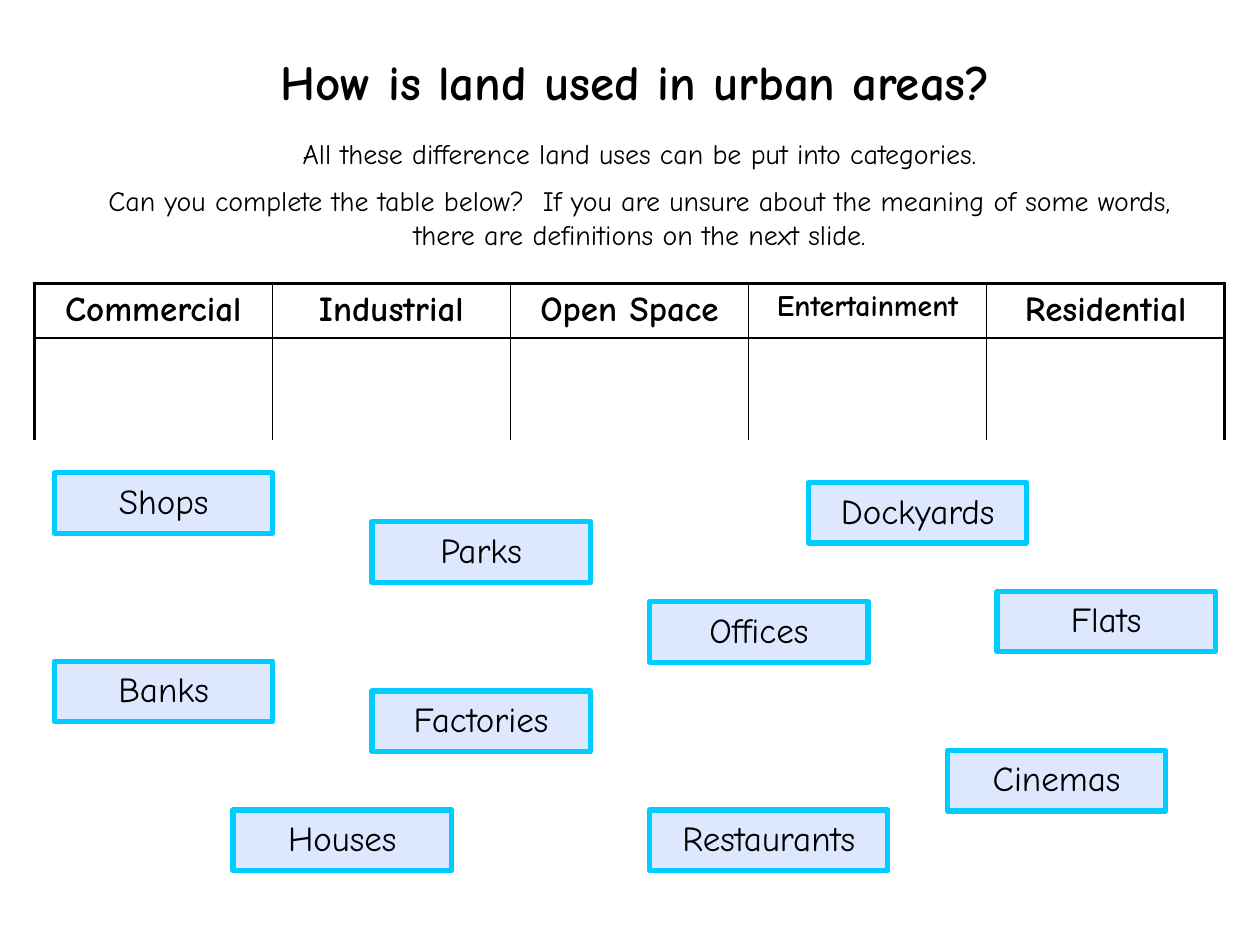
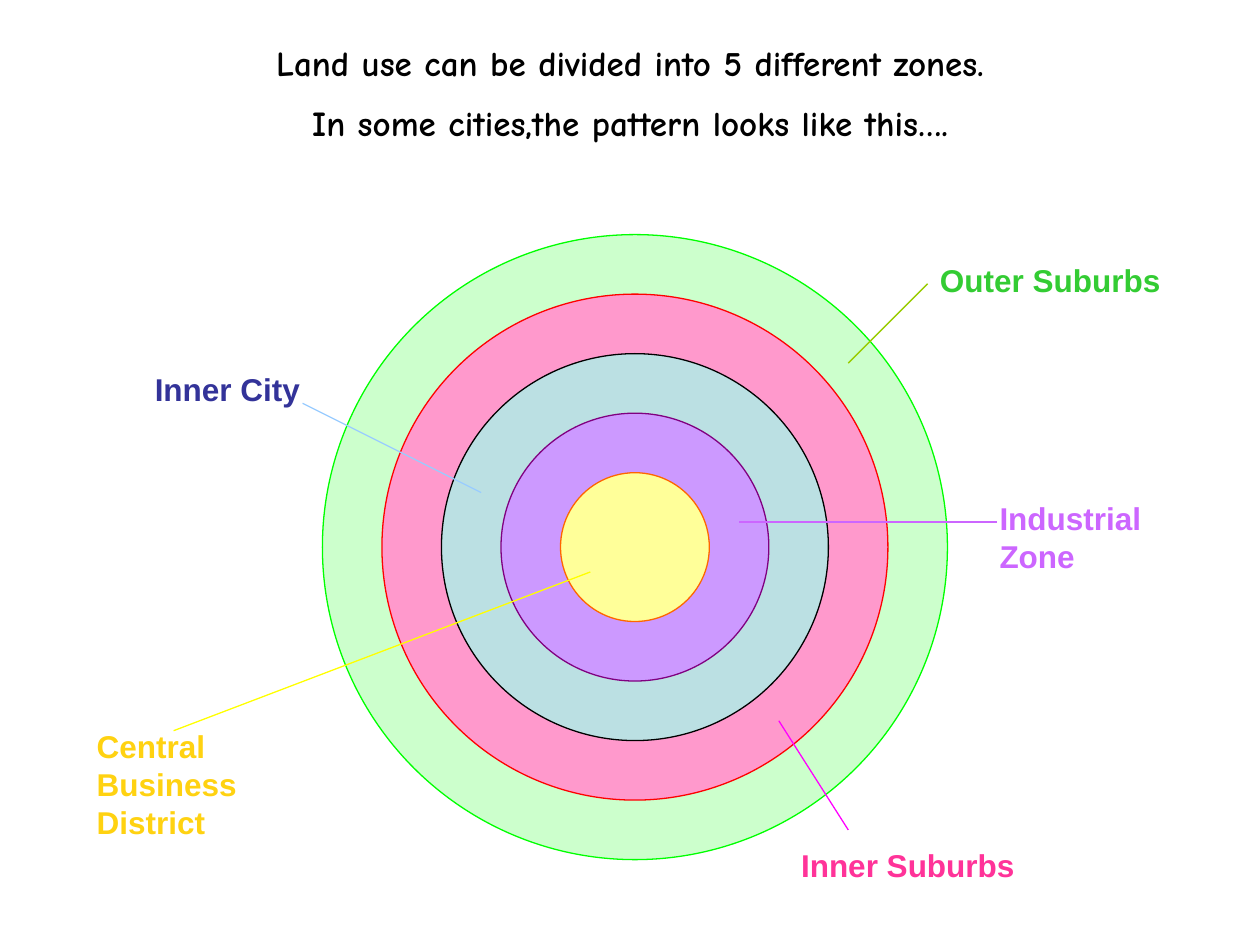
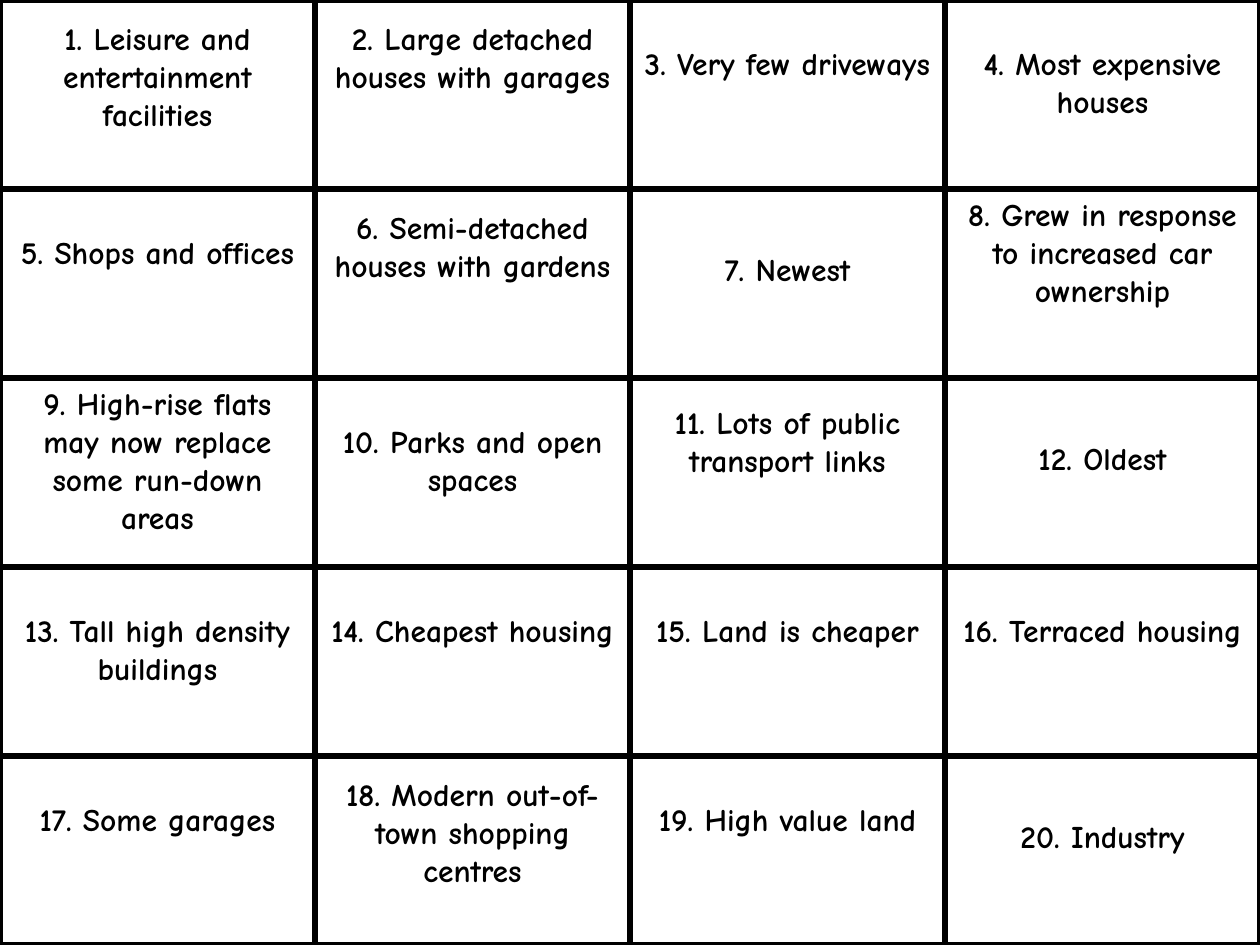
from lxml import etree
from pptx import Presentation
from pptx.dml.color import RGBColor
from pptx.enum.shapes import MSO_CONNECTOR, MSO_SHAPE
from pptx.enum.text import MSO_ANCHOR, MSO_AUTO_SIZE, PP_ALIGN
from pptx.oxml.ns import qn
from pptx.util import Cm, Pt

RECT, OVAL = MSO_SHAPE.RECTANGLE, MSO_SHAPE.OVAL
STRAIGHT = MSO_CONNECTOR.STRAIGHT
TOP, FIXED = MSO_ANCHOR.TOP, MSO_AUTO_SIZE.NONE
LEFT, MID, RIGHT = PP_ALIGN.LEFT, PP_ALIGN.CENTER, PP_ALIGN.RIGHT
TITLE_ONLY, BLANK = 5, 6
HAND, SANS = "Comic Neue", "Arial"

HUES = {
    "ink": "000000", "paper": "FFFFFF", "card": "DDE8FF", "edge": "00CCFF",
    "mint": "CCFFCC", "lime": "00FF00", "pink": "FF99CC", "red": "FF0000",
    "teal": "BBE0E3", "lilac": "CC99FF", "plum": "800080",
    "cream": "FFFF99", "orange": "FF6600", "green": "33CC33",
    "rose": "FF3399", "navy": "333399", "violet": "CC66FF",
    "gold": "FFD211", "sky": "99CCFF", "yellow": "FFFF00",
    "magenta": "FF00FF", "olive": "99CC00",
}

# All places and sizes below are in centimetres.
ASK = ["How is land used in urban areas?"]
TASK = [
    "All these difference land uses can be put into categories.",
    "Can you complete the table below?  If you are unsure about the meaning "
    "of some words, there are definitions on the next slide.",
]
HEADS = [("Commercial", 20), ("Industrial", 20), ("Open Space", 20),
         ("Entertainment", 17), ("Residential", 20)]
COL_W, ROW_H = 4.8, (1.09, 2.06)

CARD_W, CARD_H = 4.4, 1.22
CARDS = [  # word, left, top, extra width
    ("Shops", 1.1, 9.53, 0), ("Dockyards", 16.3, 9.73, 0),
    ("Banks", 1.1, 13.33, 0), ("Factories", 7.5, 13.93, 0),
    ("Houses", 4.7, 16.33, 0), ("Flats", 20.1, 11.92, 0),
    ("Parks", 7.5, 10.52, 0), ("Restaurants", 13.1, 16.33, 0.4),
    ("Cinemas", 19.1, 15.13, 0), ("Offices", 13.1, 12.13, 0),
]

ZONES = ["Land use can be divided into 5 different zones.",
         "In some cities,the pattern looks like this…."]
HUB, CORE, STEP = (12.8, 11.03), 3, 2.4
RINGS = [("mint", "lime"), ("pink", "red"), ("teal", "ink"),
         ("lilac", "plum"), ("cream", "orange")]
LABELS = [  # words, box, hue, alignment, line hue, line start, line end
    ("Outer Suburbs", (18.7, 5.13, 5.38, 1.02), "green", LEFT,
     "olive", (18.7, 5.72), (17.1, 7.32)),
    ("Inner Suburbs", (15.9, 16.92, 5.38, 1.02), "rose", LEFT,
     "magenta", (17.1, 16.73), (15.7, 14.53)),
    ("Inner City", (1.9, 7.32, 4.4, 1.02), "navy", RIGHT,
     "sky", (6.1, 8.13), (9.7, 9.93)),
    ("Industrial Zone", (19.9, 9.93, 3.81, 1.78), "violet", LEFT,
     "violet", (20.1, 10.52), (14.9, 10.52)),
    ("Central Business District", (1.7, 14.53, 5.38, 2.57), "gold", LEFT,
     "yellow", (3.5, 14.73), (11.9, 11.53)),
]

FACTS = [  # words, drop of the first line
    ("Leisure and entertainment facilities", 0.26),
    ("Large detached houses with garages", 0.26),
    ("Very few driveways", 0.76),
    ("Most expensive houses", 0.76),
    ("Shops and offices", 0.76),
    ("Semi-detached houses with gardens", 0.26),
    ("Newest", 1.11),
    ("Grew in response to increased car ownership", 0),
    ("High-rise flats may now replace some run-down areas", 0),
    ("Parks and open spaces", 0.76),
    ("Lots of public transport links", 0.38),
    ("Oldest", 1.11),
    ("Tall high density buildings", 0.76),
    ("Cheapest housing", 0.76),
    ("Land is cheaper", 0.76),
    ("Terraced housing", 0.76),
    ("Some garages", 0.76),
    ("Modern out-of-town shopping centres", 0.26),
    ("High value land", 0.76),
    ("Industry", 1.11),
]
FACT_COLS, FACT_W, FACT_H = 4, 6.35, 3.81


def rgb(hue):
    return RGBColor.from_string(HUES[hue])


def write(frame, lines, size=18, font=HAND, hue="ink", bold=False,
          align=MID, drop=0):
    """Fill a text frame; drop lowers the first line."""
    frame.word_wrap = True
    frame.auto_size = FIXED
    frame.vertical_anchor = TOP
    frame.margin_left = frame.margin_right = Cm(0.25)
    frame.margin_top, frame.margin_bottom = Cm(0.13 + drop), Cm(0.13)
    for i, line in enumerate(lines):
        para = frame.add_paragraph() if i else frame.paragraphs[0]
        para.alignment = align
        para.space_before = Pt(size / 2 if i else 0)
        run = para.add_run()
        run.text = line
        run.font.name, run.font.size, run.font.bold = font, Pt(size), bold
        run.font.color.rgb = rgb(hue)


def add_title(slide, lines, box, size):
    title = slide.shapes.title
    title.left, title.top, title.width, title.height = map(Cm, box)
    write(title.text_frame, lines, size=size, bold=True)


def add_text(slide, lines, box, **style):
    text = slide.shapes.add_textbox(*map(Cm, box))
    write(text.text_frame, lines, **style)


def add_form(slide, kind, box, fill, edge, width):
    form = slide.shapes.add_shape(kind, *map(Cm, box))
    form.shadow.inherit = False
    form.fill.solid()
    form.fill.fore_color.rgb = rgb(fill)
    form.line.color.rgb = rgb(edge)
    form.line.width = Pt(width)
    return form


def add_line(slide, start, end, hue):
    line = slide.shapes.add_connector(STRAIGHT, *map(Cm, start + end))
    line.line.color.rgb = rgb(hue)
    line.line.width = Pt(0.75)
    etree.SubElement(line._element.spPr, qn("a:effectLst"))


def set_edges(cell, widths):
    """Draw left, right, top and bottom borders; zero means none."""
    props = cell._tc.get_or_add_tcPr()
    for side, width in zip("LRTB", widths):
        edge = etree.SubElement(props, qn("a:ln" + side), w=str(Pt(width)))
        if width:
            fill = etree.SubElement(edge, qn("a:solidFill"))
            etree.SubElement(fill, qn("a:srgbClr"), val=HUES["ink"])
        else:
            etree.SubElement(edge, qn("a:noFill"))


def add_grid(slide):
    count = len(HEADS)
    box = (0.69, 5.72, COL_W * count, sum(ROW_H))
    table = slide.shapes.add_table(2, count, *map(Cm, box)).table
    table.first_row = table.horz_banding = False
    for row, high in zip(table.rows, ROW_H):
        row.height = Cm(high)
    thin, thick = 1, 2.25
    for c, (head, size) in enumerate(HEADS):
        table.columns[c].width = Cm(COL_W)
        sides = (thick if c == 0 else thin,
                 thick if c == count - 1 else thin)
        for r, ends in enumerate([(thick, thin), (thin, 0)]):
            cell = table.cell(r, c)
            set_edges(cell, sides + ends)
            cell.fill.solid()
            cell.fill.fore_color.rgb = rgb("paper")
        write(table.cell(0, c).text_frame, [head], size=size, bold=True)


def build_uses(slide):
    add_title(slide, ASK, (1.3, 0.91, 23.01, 1.45), 28)
    add_text(slide, TASK, (1.3, 2.62, 23.19, 2.67), size=16)
    add_grid(slide)
    for word, left, top, extra in CARDS:
        box = (left, top, CARD_W + extra, CARD_H)
        card = add_form(slide, RECT, box, "card", "edge", 3)
        write(card.text_frame, [word], size=20)


def build_zones(slide):
    add_title(slide, ZONES, (1.3, 0.71, 22.81, 2.36), 20)
    for i, (fill, edge) in enumerate(RINGS):
        size = CORE + STEP * (len(RINGS) - 1 - i)
        box = (HUB[0] - size / 2, HUB[1] - size / 2, size, size)
        add_form(slide, OVAL, box, fill, edge, 0.75)
    for words, box, hue, align, ray, start, end in LABELS:
        add_text(slide, [words], box, font=SANS, hue=hue, bold=True,
                 align=align)
        add_line(slide, start, end, ray)


def build_facts(slide):
    for i, (words, drop) in enumerate(FACTS):
        row, col = divmod(i, FACT_COLS)
        box = (col * FACT_W, row * FACT_H, FACT_W, FACT_H)
        fact = add_form(slide, RECT, box, "paper", "ink", 3)
        write(fact.text_frame, [f"{i + 1}. {words}"], bold=True, drop=drop)


def main():
    deck = Presentation()
    deck.slide_width, deck.slide_height = Cm(25.4), Cm(19.05)
    for build, layout in [(build_uses, TITLE_ONLY), (build_zones, TITLE_ONLY),
                          (build_facts, BLANK)]:
        build(deck.slides.add_slide(deck.slide_layouts[layout]))
    deck.save("out.pptx")


if __name__ == "__main__":
    main()
